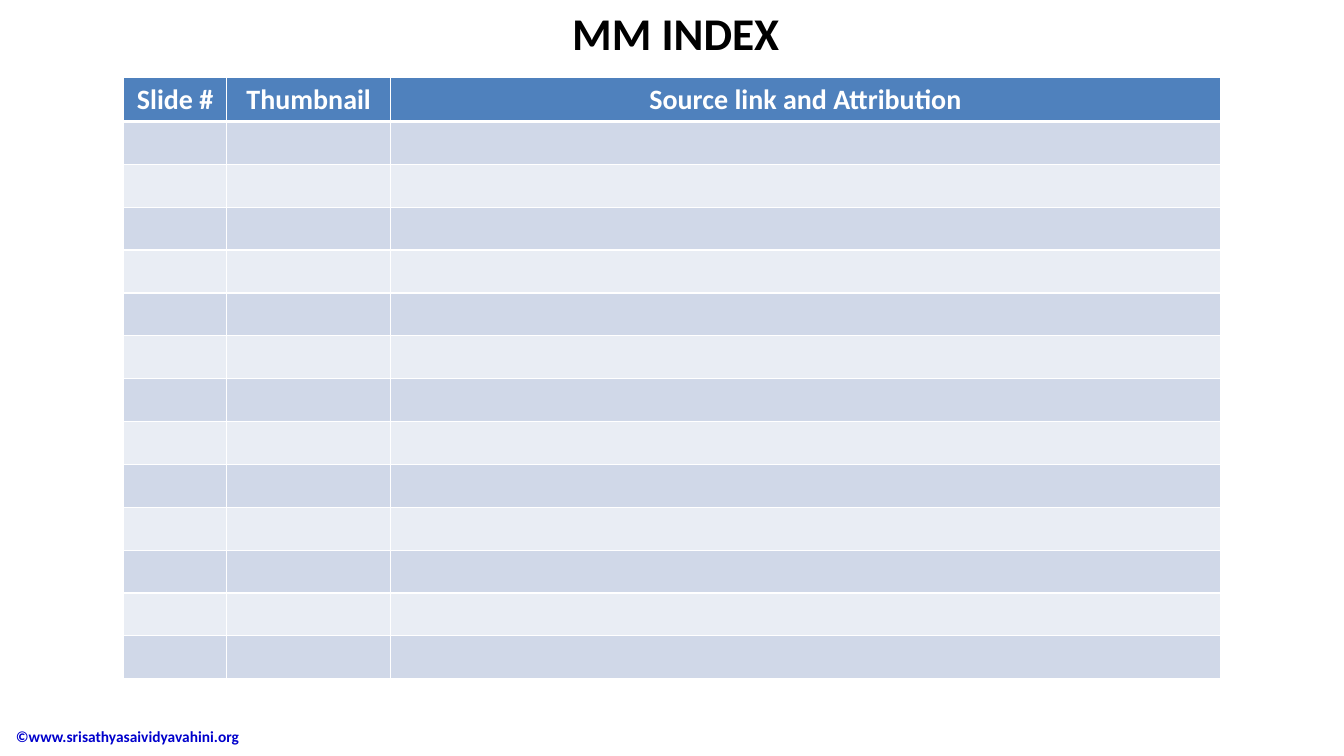
"""Build the MM INDEX slide: a title, an empty source table and a copyright line."""
from lxml.etree import SubElement
from pptx import Presentation
from pptx.dml.color import RGBColor
from pptx.enum.text import MSO_ANCHOR as ANCHOR, PP_ALIGN as ALIGN
from pptx.oxml.ns import qn
from pptx.util import Cm, Pt

TITLE = "MM INDEX"
COPYRIGHT = "©www.srisathyasaividyavahini.org"
COLUMNS = [("Slide #", 2.59), ("Thumbnail", 4.14), ("Source link and Attribution", 20.9)]
BODY_ROWS = 13
ROW_HEIGHT = 1.08
TABLE_LEFT, TABLE_TOP = 3.12, 1.96

FONT = "Calibri"
BLACK = RGBColor(0x00, 0x00, 0x00)
WHITE = RGBColor(0xFF, 0xFF, 0xFF)
LINK_BLUE = RGBColor(0x00, 0x00, 0xCC)
HEADER_BLUE = RGBColor(0x4F, 0x81, 0xBD)
BANDS = [RGBColor(0xD0, 0xD8, 0xE8), RGBColor(0xE9, 0xED, 0xF4)]


def write(tf, text, size, color, align=ALIGN.LEFT):
    p = tf.paragraphs[0]
    p.alignment = align
    r = p.add_run()
    r.text = text
    r.font.name, r.font.size, r.font.bold = FONT, Pt(size), True
    r.font.color.rgb = color


def add_text(slide, box, text, size, color, align, anchor):
    tf = slide.shapes.add_textbox(*map(Cm, box)).text_frame
    tf.word_wrap = True
    tf.vertical_anchor = anchor
    write(tf, text, size, color, align)
    return tf


def set_border(cell, side, width):
    ln = SubElement(cell._tc.get_or_add_tcPr(), qn(f"a:ln{side}"), w=str(Pt(width)))
    fill = SubElement(ln, qn("a:solidFill"))
    SubElement(fill, qn("a:srgbClr"), val=str(WHITE))


def add_index_table(slide):
    rows = BODY_ROWS + 1
    width = sum(w for _, w in COLUMNS)
    table = slide.shapes.add_table(rows, len(COLUMNS), Cm(TABLE_LEFT), Cm(TABLE_TOP),
                                   Cm(width), Cm(rows * ROW_HEIGHT)).table
    for col, (heading, col_width) in enumerate(COLUMNS):
        table.columns[col].width = Cm(col_width)
        for row in range(rows):
            cell = table.cell(row, col)
            widths = {"L": 1, "R": 1, "T": 3 if row == 1 else 1, "B": 3 if row == 0 else 1}
            for side, line_width in widths.items():
                set_border(cell, side, line_width)
            cell.fill.solid()
            cell.fill.fore_color.rgb = BANDS[(row - 1) % 2] if row else HEADER_BLUE
        write(table.cell(0, col).text_frame, heading, 20, WHITE, ALIGN.CENTER)
    for row in table.rows:
        row.height = Cm(ROW_HEIGHT)


def main():
    prs = Presentation()
    prs.slide_width, prs.slide_height = Cm(33.87), Cm(19.05)
    slide = prs.slides.add_slide(prs.slide_layouts[6])
    tf = add_text(slide, (-1.12, 18.03, 10.24, 1.04), COPYRIGHT, 11, LINK_BLUE,
                  ALIGN.LEFT, ANCHOR.MIDDLE)
    tf.margin_left = Cm(1.52)
    add_text(slide, (2.64, 0, 28.78, 1.4), TITLE, 32.4, BLACK, ALIGN.CENTER, ANCHOR.TOP)
    add_index_table(slide)
    prs.save("out.pptx")


if __name__ == "__main__":
    main()
